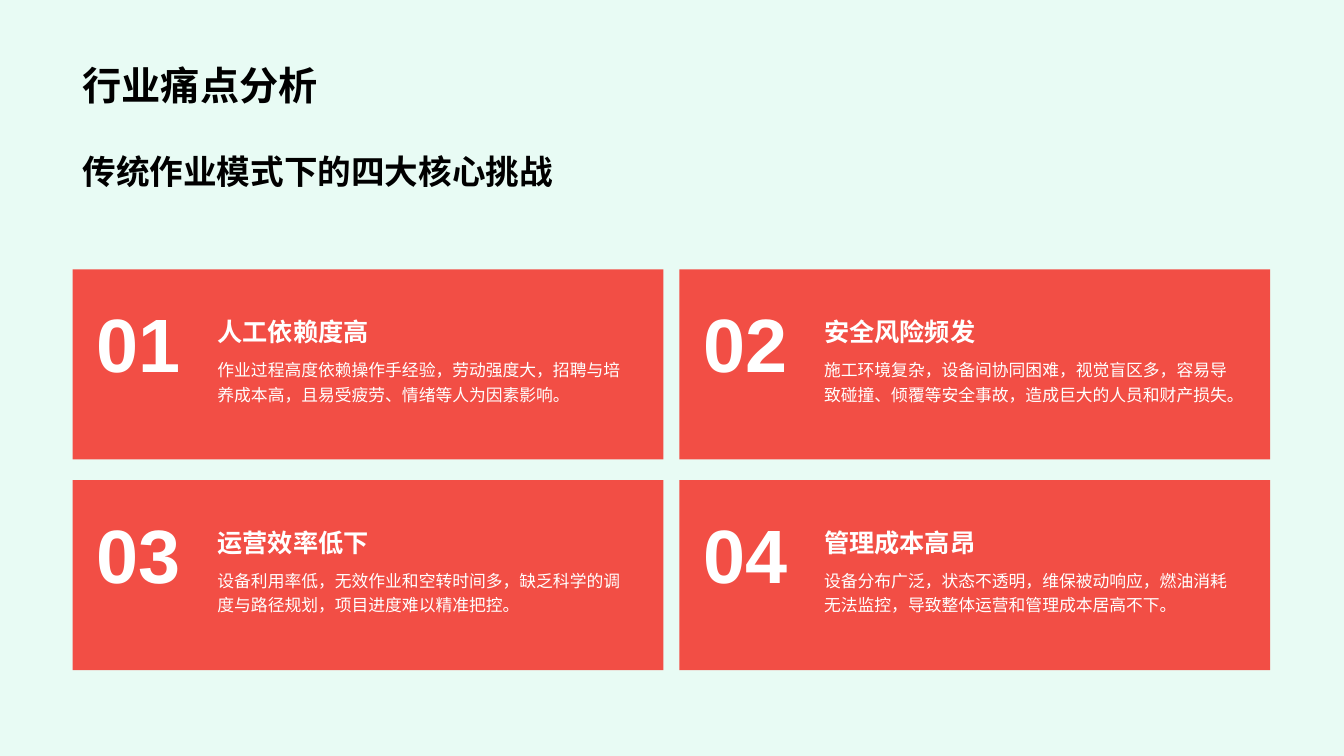
from lxml.etree import SubElement
from pptx import Presentation
from pptx.dml.color import RGBColor
from pptx.enum.lang import MSO_LANGUAGE_ID
from pptx.enum.shapes import MSO_SHAPE
from pptx.enum.text import MSO_ANCHOR, MSO_AUTO_SIZE, PP_ALIGN
from pptx.oxml.ns import qn
from pptx.util import Cm, Pt

TITLE = "行业痛点分析"
SUBTITLE = "传统作业模式下的四大核心挑战"
CHALLENGES = [
    ("人工依赖度高", "作业过程高度依赖操作手经验，劳动强度大，招聘与培养成本高，且易受疲劳、情绪等人为因素影响。"),
    ("安全风险频发", "施工环境复杂，设备间协同困难，视觉盲区多，容易导致碰撞、倾覆等安全事故，造成巨大的人员和财产损失。"),
    ("运营效率低下", "设备利用率低，无效作业和空转时间多，缺乏科学的调度与路径规划，项目进度难以精准把控。"),
    ("管理成本高昂", "设备分布广泛，状态不透明，维保被动响应，燃油消耗无法监控，导致整体运营和管理成本居高不下。"),
]

FONT = "Arial"
MINT, RED, BLACK, WHITE = "E8FBF4", "F24E45", "000000", "FFFFFF"

# Card grid, in centimetres
LEFT, TOP = 1.83, 6.79
CARD_W, CARD_H = 14.89, 4.79
GAP_X, GAP_Y = 0.4, 0.52
COLUMNS = 2
FULL_W = COLUMNS * CARD_W + GAP_X

TITLE_STYLE = {"size": Pt(28), "bold": True}
SUBTITLE_STYLE = {"size": Pt(24), "bold": True}
NUMBER_STYLE = {"size": Pt(54), "bold": True}
HEADING_STYLE = {"size": Pt(18), "bold": True}
DETAIL_STYLE = {"size": Pt(12), "bold": False}


def rgb(color):
    return RGBColor.from_string(color)


def cm_box(*lengths):
    return [Cm(length) for length in lengths]


def write(s, text, style, color, anchor=MSO_ANCHOR.TOP, wrap=True, spacing=1.0):
    tf = s.text_frame
    frame = {"auto_size": MSO_AUTO_SIZE.NONE, "word_wrap": wrap, "vertical_anchor": anchor}
    for name, value in frame.items():
        setattr(tf, name, value)
    p = tf.paragraphs[0]
    p.alignment, p.line_spacing = PP_ALIGN.LEFT, spacing
    r = p.add_run()
    r.text = text
    font = {"name": FONT, "language_id": MSO_LANGUAGE_ID.SIMPLIFIED_CHINESE, **style}
    for name, value in font.items():
        setattr(r.font, name, value)
    r.font.color.rgb = rgb(color)
    # East Asian typeface
    SubElement(r.font._element, qn("a:ea"), typeface=FONT)


def add_text(slide, box, *args, **options):
    write(slide.shapes.add_textbox(*cm_box(*box)), *args, **options)


def add_card(slide, x, y, number, heading, detail):
    s = slide.shapes.add_shape(MSO_SHAPE.RECTANGLE, *cm_box(x, y, CARD_W, CARD_H))
    s.shadow.inherit = False
    s.fill.solid()
    s.fill.fore_color.rgb = rgb(RED)
    s.line.fill.background()
    add_text(slide, (x + 3.4, y + 0.27, 11.05, 1.8), heading, HEADING_STYLE, WHITE,
             anchor=MSO_ANCHOR.BOTTOM)
    add_text(slide, (x + 3.4, y + 2.06, 11.05, 2.31), detail, DETAIL_STYLE, WHITE, spacing=1.2)
    add_text(slide, (x + 0.36, y + 0.58, 3.05, 3.99), number, NUMBER_STYLE, WHITE, wrap=False)


def main():
    prs = Presentation()
    prs.slide_width, prs.slide_height = Cm(33.87), Cm(19.05)
    slide = prs.slides.add_slide(prs.slide_layouts[5])
    slide.background.fill.solid()
    slide.background.fill.fore_color.rgb = rgb(MINT)

    # Title and subtitle
    title = slide.shapes.title
    title.left, title.top, title.width, title.height = cm_box(LEFT, 0.36, FULL_W, 2.49)
    write(title, TITLE, TITLE_STYLE, BLACK, anchor=MSO_ANCHOR.BOTTOM)
    add_text(slide, (LEFT, 3.15, FULL_W, 2.31), SUBTITLE, SUBTITLE_STYLE, BLACK,
             anchor=MSO_ANCHOR.MIDDLE)

    # Numbered challenge cards
    for i, (heading, detail) in enumerate(CHALLENGES):
        row, column = divmod(i, COLUMNS)
        x = LEFT + column * (CARD_W + GAP_X)
        y = TOP + row * (CARD_H + GAP_Y)
        add_card(slide, x, y, f"{i + 1:02d}", heading, detail)

    prs.save("out.pptx")


if __name__ == "__main__":
    main()
